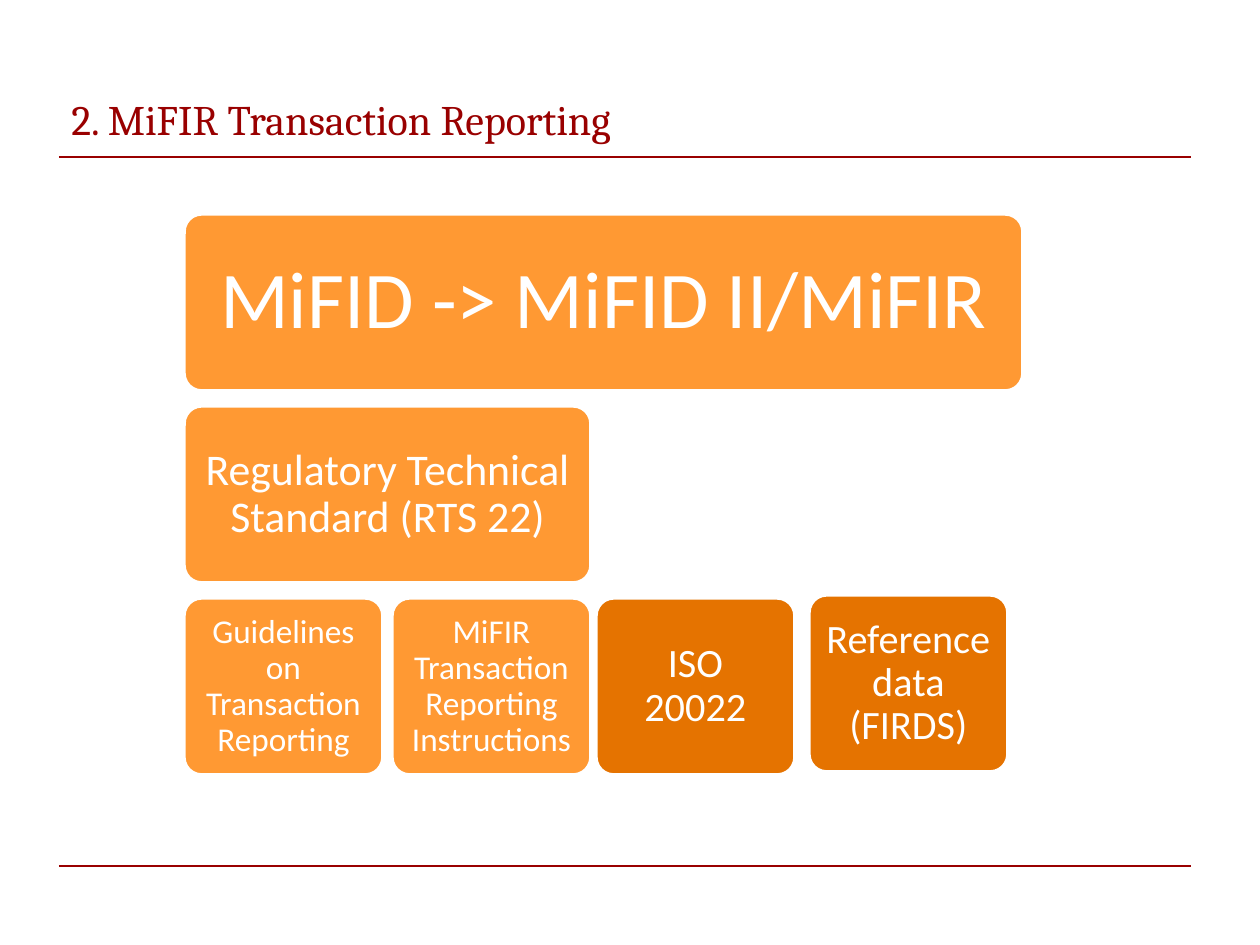
from lxml import etree
from pptx import Presentation
from pptx import util as u
from pptx.dml.color import RGBColor
from pptx.enum import shapes, text
from pptx.oxml.ns import qn

EMU_PER_PX = 914400 / 126
RED, ORANGE, DARK_ORANGE, WHITE = "990000", "FF9933", "E57300", "FFFFFF"
LEFT, TOP, BOX_HEIGHT, ROW_STEP = 184, 214, 177, 192
FULL, HALF, QUARTER = 839, 407, 199
BOTTOM = TOP + 2 * ROW_STEP

# left, top, width, fill, inset, text size, label
# (the rounded corners add about 5 px to each inset)
BOXES = [
    (LEFT, TOP, FULL, ORANGE, 22, 46, "MiFID -> MiFID II/MiFIR"),
    (LEFT, TOP + ROW_STEP, HALF, ORANGE, 10, 25,
     "Regulatory Technical Standard (RTS 22)"),
    (LEFT, BOTTOM, QUARTER, ORANGE, 9, 19,
     "Guidelines on Transaction Reporting"),
    (LEFT + HALF - QUARTER, BOTTOM, QUARTER, ORANGE, 9, 19,
     "MiFIR Transaction Reporting Instructions"),
    (596, BOTTOM, QUARTER, DARK_ORANGE, 13, 23, "ISO 20022"),
    (809, BOTTOM - 3, QUARTER, DARK_ORANGE, 10, 23, "Reference data (FIRDS)"),
]


def px(length):
    return u.Emu(round(length * EMU_PER_PX))


def color(hex_value):
    return RGBColor.from_string(hex_value)


def write(frame, label, font, size, hex_value):
    frame.text = label
    frame.word_wrap = True
    frame.vertical_anchor = text.MSO_ANCHOR.MIDDLE
    run_font = frame.paragraphs[0].runs[0].font
    run_font.name = font
    run_font.size = u.Pt(size)
    run_font.color.rgb = color(hex_value)


def add_rule(slide, y):
    rule = slide.shapes.add_connector(
        shapes.MSO_CONNECTOR.STRAIGHT, px(59), px(y), px(1191), px(y))
    rule.line.color.rgb = color(RED)
    rule.line.width = u.Pt(1.25)
    etree.SubElement(rule._element.spPr, qn("a:effectLst"))


def add_title(slide, label):
    title = slide.shapes.add_textbox(px(59), px(75), px(1134), px(87))
    write(title.text_frame, label, "Cambria", 24, RED)


def add_box(slide, left, top, width, fill, inset, size, label):
    box = slide.shapes.add_shape(
        shapes.MSO_SHAPE.ROUNDED_RECTANGLE,
        px(left), px(top), px(width), px(BOX_HEIGHT))
    box.adjustments[0] = 0.1
    box.shadow.inherit = False
    box.fill.solid()
    box.fill.fore_color.rgb = color(fill)
    box.line.color.rgb = color(WHITE)
    box.line.width = u.Pt(2)

    frame = box.text_frame
    write(frame, label, "Calibri", size, WHITE)
    frame.margin_left = frame.margin_right = px(inset)
    frame.margin_top = frame.margin_bottom = px(inset)
    frame.paragraphs[0].alignment = text.PP_ALIGN.CENTER
    frame.paragraphs[0].line_spacing = 0.9


def main():
    deck = Presentation()
    deck.slide_width, deck.slide_height = px(1260), px(945)
    slide = deck.slides.add_slide(deck.slide_layouts[6])

    # Heading and page rules
    for y in (157, 866):
        add_rule(slide, y)
    add_title(slide, "2. MiFIR Transaction Reporting")

    # Hierarchy of rules, from the directive down to the guidance
    for box in BOXES:
        add_box(slide, *box)

    deck.save("out.pptx")


if __name__ == "__main__":
    main()
